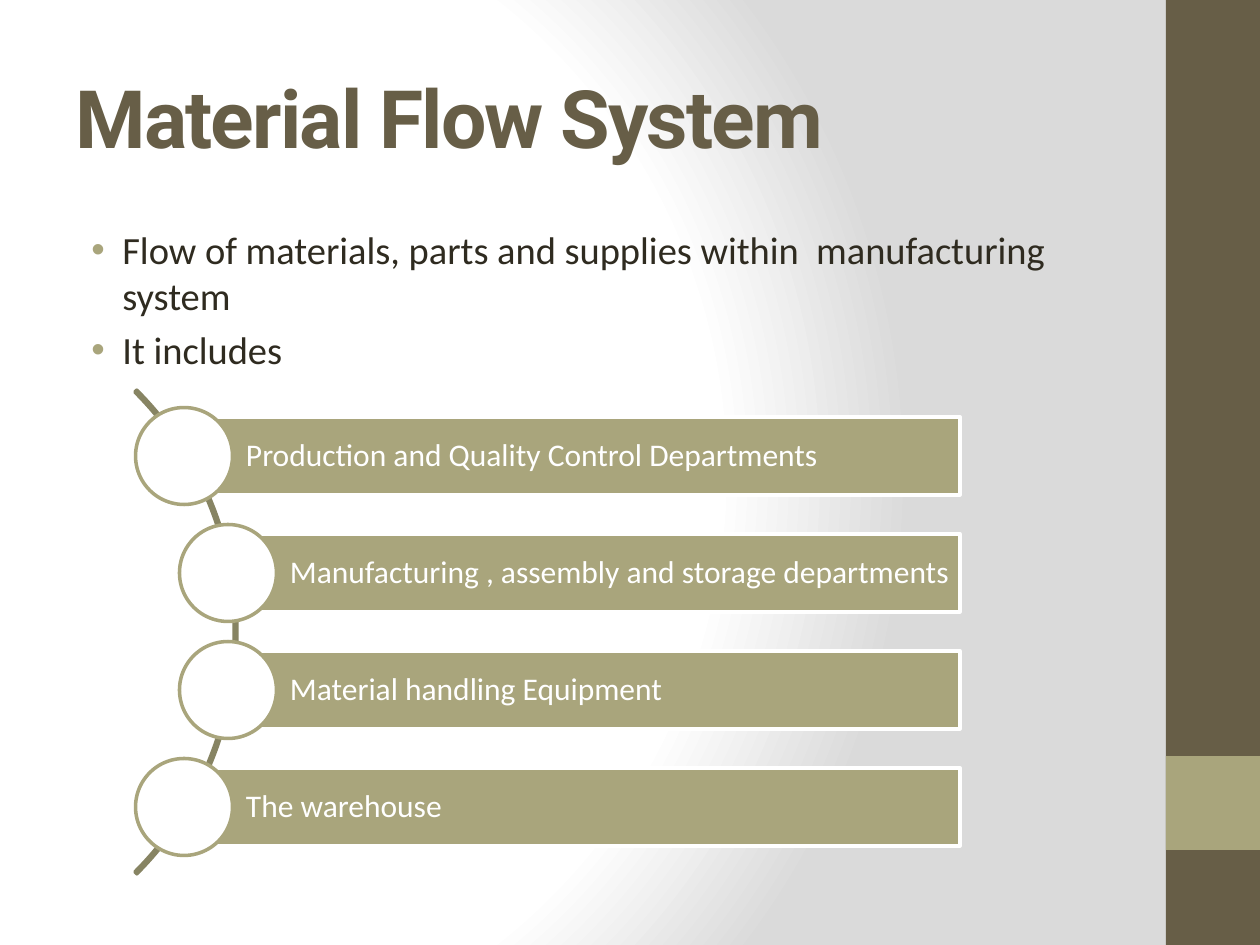
from lxml.etree import SubElement
from pptx import Presentation
from pptx.dml.color import RGBColor
from pptx.enum.shapes import MSO_SHAPE
from pptx.enum.text import MSO_ANCHOR, PP_ALIGN
from pptx.oxml import parse_xml
from pptx.oxml.ns import nsdecls, qn
from pptx.util import Pt

EMU_PER_PX = 914400 / 126
BROWN, OLIVE, ARC, INK, WHITE = "675E47", "A9A57C", "878463", "2F2B20", "FFFFFF"


def px(length):
    return round(length * EMU_PER_PX)


def color(hex_value):
    return RGBColor.from_string(hex_value)


class SlideBuilder:
    font = "Calibri"
    line_width = Pt(2)

    def __init__(self, slide):
        self.slide = slide

    def background(self, stops, focus):
        fill = self.slide.background.fill
        fill.solid()
        solid = next(self.slide.element.iter(qn("a:solidFill")))
        stop_xml = "".join(
            f'<a:gs pos="{position * 1000}"><a:srgbClr val="{value}"/></a:gs>'
            for position, value in stops)
        edges = " ".join(f'{side}="{value * 1000}"' for side, value in zip("ltrb", focus))
        gradient = parse_xml(
            f'<a:gradFill {nsdecls("a")} rotWithShape="1"><a:gsLst>{stop_xml}</a:gsLst>'
            f'<a:path path="circle"><a:fillToRect {edges}/></a:path></a:gradFill>')
        solid.getparent().replace(solid, gradient)

    def shape(self, kind, box, fill=None, line=None):
        shape = self.slide.shapes.add_shape(kind, *map(px, box))
        shape.shadow.inherit = False
        if fill:
            shape.fill.solid()
            shape.fill.fore_color.rgb = color(fill)
        else:
            shape.fill.background()
        if line:
            shape.line.color.rgb = color(line)
            shape.line.width = self.line_width
        else:
            shape.line.fill.background()
        return shape

    def text_box(self, box, anchor=MSO_ANCHOR.TOP):
        frame = self.slide.shapes.add_textbox(*map(px, box)).text_frame
        frame.word_wrap = True
        frame.vertical_anchor = anchor
        return frame

    def run(self, paragraph, text, size, text_color, font=None, bold=False):
        run = paragraph.add_run()
        run.text = text
        run.font.name = font or self.font
        run.font.size = Pt(size)
        run.font.bold = bold
        run.font.color.rgb = color(text_color)
        return run

    def title(self, box, text):
        frame = self.text_box(box, MSO_ANCHOR.MIDDLE)
        run = self.run(frame.paragraphs[0], text, 46, BROWN, "Roboto", True)
        run.font._element.set("spc", "-100")

    def bullets(self, box, items, size=22):
        frame = self.text_box(box)
        for index, item in enumerate(items):
            paragraph = frame.add_paragraph() if index else frame.paragraphs[0]
            paragraph.space_before = Pt(size * 0.2)
            properties = paragraph._p.get_or_add_pPr()
            properties.set("marL", str(px(47)))
            properties.set("indent", str(px(-31)))
            bullet_color = SubElement(properties, qn("a:buClr"))
            SubElement(bullet_color, qn("a:srgbClr"), val=OLIVE)
            SubElement(properties, qn("a:buFont"), typeface="Arial")
            SubElement(properties, qn("a:buChar"), char="•")
            self.run(paragraph, item, size, INK)

    def arc(self, box, start, end, thickness):
        arc = self.shape(MSO_SHAPE.BLOCK_ARC, box, line=ARC)
        for index, value in enumerate((start, end, thickness)):
            arc.adjustments[index] = value

    def bar(self, box, text):
        frame = self.shape(MSO_SHAPE.RECTANGLE, box, OLIVE, WHITE).text_frame
        frame.word_wrap = True
        frame.vertical_anchor = MSO_ANCHOR.MIDDLE
        frame.margin_left = px(62)
        frame.margin_right = frame.margin_top = frame.margin_bottom = px(6)
        paragraph = frame.paragraphs[0]
        paragraph.alignment = PP_ALIGN.LEFT
        paragraph.line_spacing = 0.9
        self.run(paragraph, text, 18, WHITE)

    def circle(self, center_x, center_y, size):
        box = (center_x - size / 2, center_y - size / 2, size, size)
        self.shape(MSO_SHAPE.OVAL, box, WHITE, OLIVE)


def main():
    presentation = Presentation()
    presentation.slide_width, presentation.slide_height = px(1260), px(945)
    builder = SlideBuilder(presentation.slides.add_slide(presentation.slide_layouts[6]))

    # Background and side band
    builder.background([(0, WHITE), (75, WHITE), (100, "DADADA")], (20, 50, 100, 50))
    builder.shape(MSO_SHAPE.RECTANGLE, (1166, 0, 94, 945), BROWN)
    builder.shape(MSO_SHAPE.RECTANGLE, (1166, 756, 94, 94), OLIVE)

    # Title and bullets
    builder.title((63, 38, 1050, 157), "Material Flow System")
    builder.bullets((63, 220, 1050, 662), [
        "Flow of materials, parts and supplies within  manufacturing  system",
        "It includes",
    ])

    # Departments along the arc
    builder.arc((-447, 290, 684, 684), 189, 27, 0.004)
    departments = [
        (184, "Production and Quality Control Departments"),
        (228, "Manufacturing , assembly and storage departments"),
        (228, "Material handling Equipment"),
        (184, "The warehouse"),
    ]
    right, top, height, pitch = 960, 417, 78, 117
    for row, (left, text) in enumerate(departments):
        y = top + row * pitch
        builder.bar((left, y, right - left, height), text)
        builder.circle(left, y + height / 2, 97)

    presentation.save("out.pptx")


if __name__ == "__main__":
    main()
